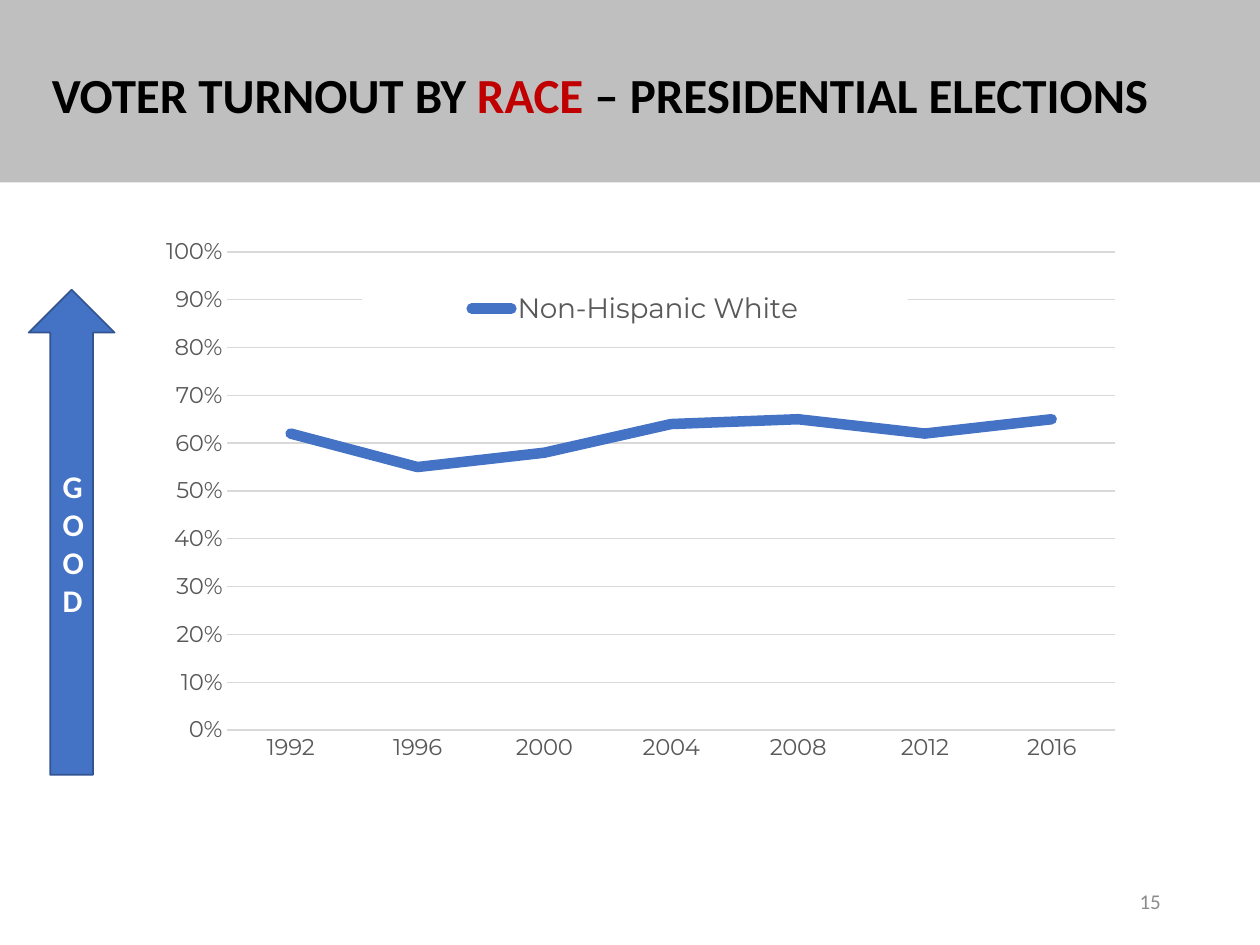
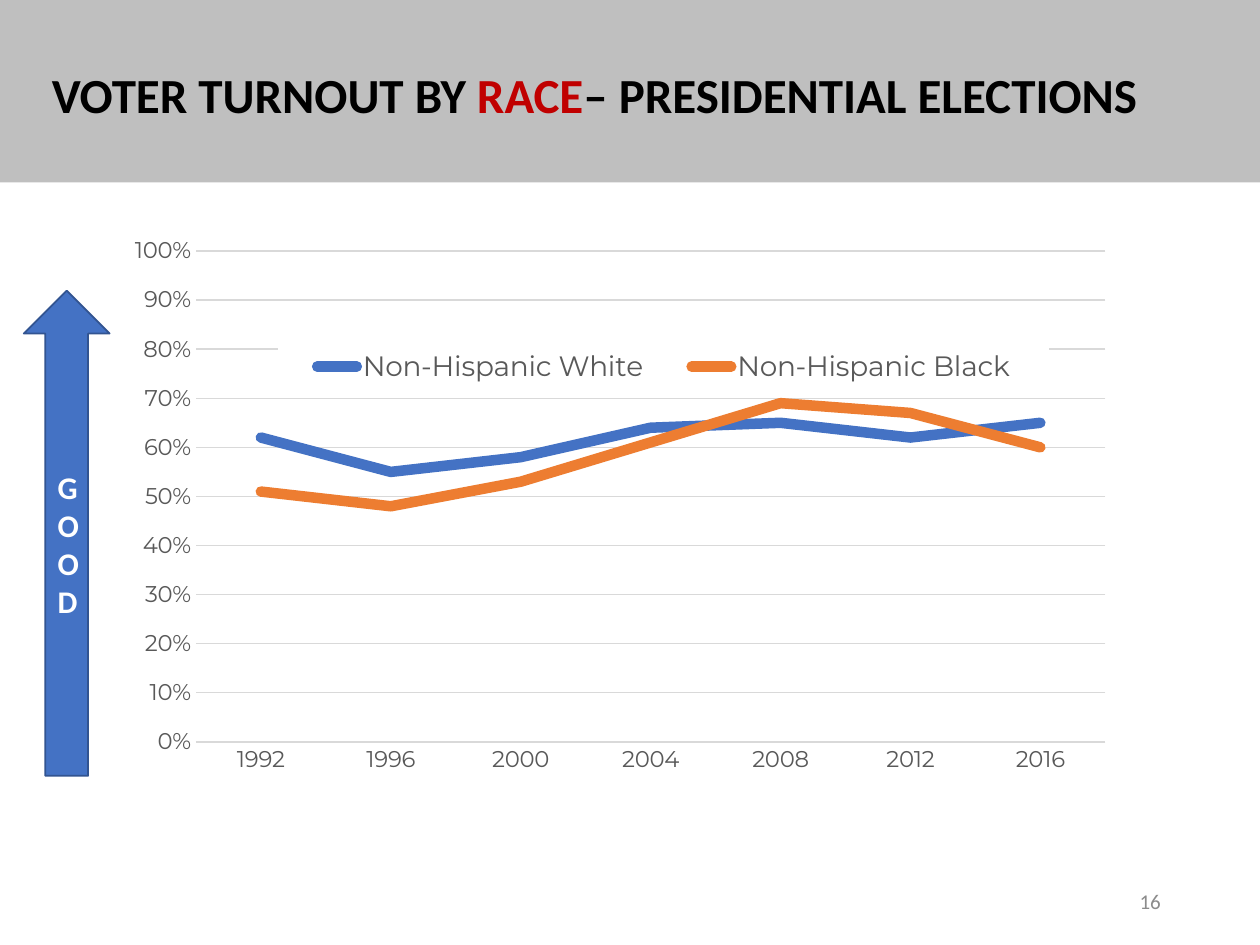
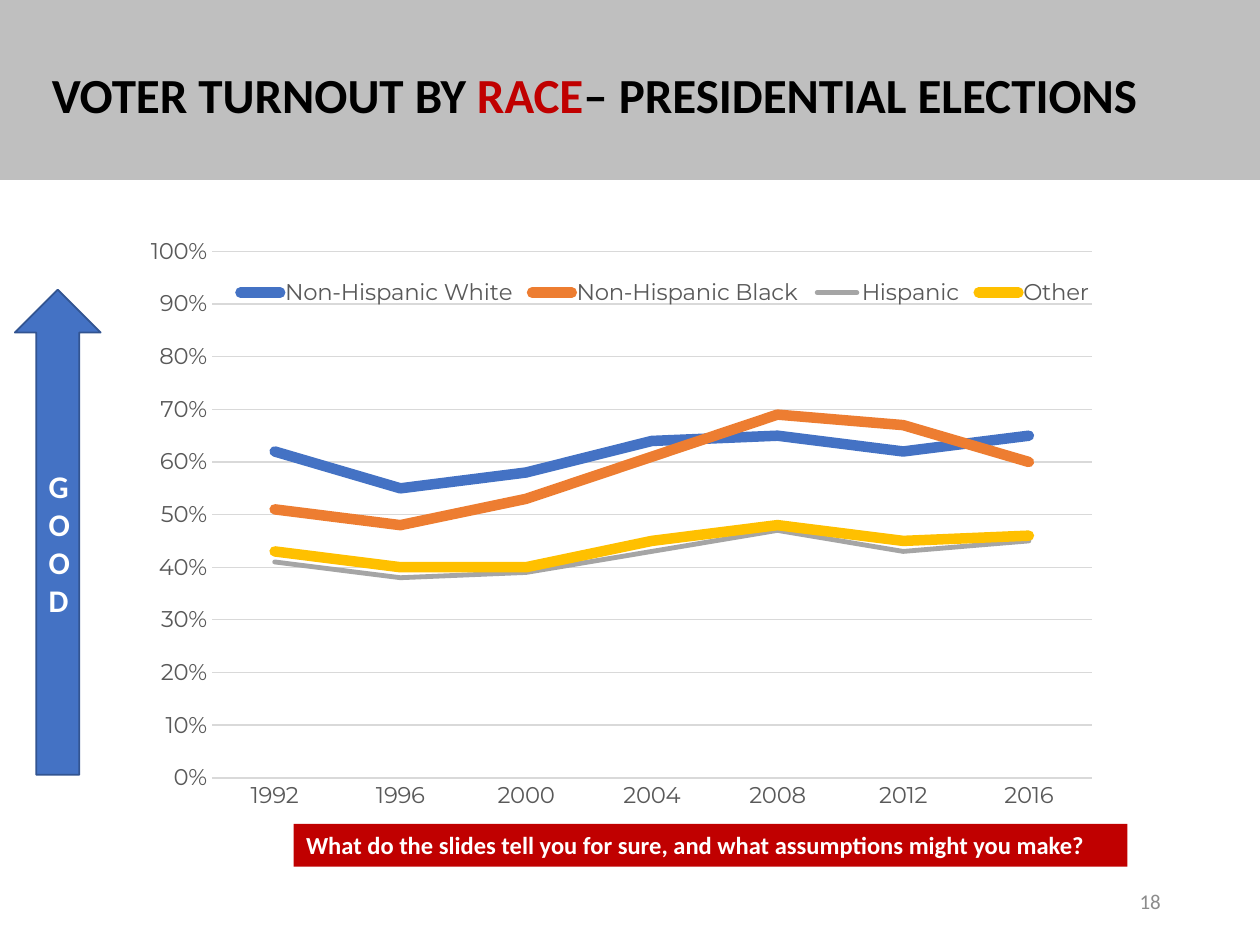
import pptx
import pptx.chart.data
import pptx.dml.color
import pptx.enum.chart
import pptx.enum.shapes
import pptx.enum.text
import pptx.oxml
import pptx.oxml.ns
import pptx.util
from pptx.util import Cm, Pt

# Shared colours and fonts
RGBColor = pptx.dml.color.RGBColor
BLACK = RGBColor(0x00, 0x00, 0x00)
WHITE = RGBColor(0xFF, 0xFF, 0xFF)
RED = RGBColor(0xC0, 0x00, 0x00)
BAND_GRAY = RGBColor(0xBF, 0xBF, 0xBF)
GRID_GRAY = RGBColor(0xD9, 0xD9, 0xD9)
LABEL_GRAY = RGBColor(0x59, 0x59, 0x59)
NUMBER_GRAY = RGBColor(0x8C, 0x8C, 0x8C)
BLUE = RGBColor(0x44, 0x72, 0xC4)
DARK_BLUE = RGBColor(0x32, 0x54, 0x91)
ORANGE = RGBColor(0xED, 0x7D, 0x31)
GRAY = RGBColor(0xA5, 0xA5, 0xA5)
GOLD = RGBColor(0xFF, 0xC0, 0x00)
TEXT_FONT = "Calibri"
CHART_FONT = "Montserrat"

# Turnout data: name, shares, line colour, line width
YEARS = ["1992", "1996", "2000", "2004", "2008", "2012", "2016"]
TURNOUT = [
    ("Non-Hispanic White", (0.62, 0.55, 0.58, 0.64, 0.65, 0.62, 0.65), BLUE, 6),
    ("Non-Hispanic Black", (0.51, 0.48, 0.53, 0.61, 0.69, 0.67, 0.60), ORANGE, 6),
    ("Hispanic", (0.41, 0.38, 0.39, 0.43, 0.47, 0.43, 0.45), GRAY, 2.75),
    ("Other", (0.43, 0.40, 0.40, 0.45, 0.48, 0.45, 0.46), GOLD, 6),
]

# What differs between slides; boxes are left, top, width, height in cm
SLIDES = [
    {"number": "15", "dash": " – ", "groups": 1, "band_top": 0,
     "arrow": (0.58, 5.84), "chart": (2.64, 4.55, 20.4, 12.4),
     "plot": (4.58, 5.08, 17.9, 9.64), "legend": (7.3, 5.62, 11, 1.2),
     "legend_size": 16, "legend_filled": True},
    {"number": "16", "dash": "– ", "groups": 2, "band_top": 0,
     "arrow": (0.48, 5.86), "chart": (2.64, 4.62, 19.66, 12.5),
     "plot": (3.95, 5.06, 18.34, 9.9), "legend": (5.61, 6.79, 15.54, 1.2),
     "legend_size": 16, "legend_filled": True},
    {"number": "18", "dash": "– ", "groups": 4, "band_top": -0.05,
     "arrow": (0.3, 5.84), "chart": (2.64, 4.55, 19.76, 12.95),
     "plot": (4.27, 5.07, 17.74, 10.61), "legend": (4.6, 5.3, 17.6, 1.2),
     "legend_size": 13, "legend_filled": False},
]


def add_run(paragraph, text, size, color, bold=True):
    run = paragraph.add_run()
    run.text = text
    run.font.name = TEXT_FONT
    run.font.size = Pt(size)
    run.font.bold = bold
    run.font.color.rgb = color


def set_chart_layout(parent, index, box, frame, target=""):
    """Place a chart part at a slide box, as fractions of the chart frame."""
    for old_layout in parent.findall(pptx.oxml.ns.qn("c:layout")):
        parent.remove(old_layout)
    left, top, width, height = box
    fractions = {"x": (left - frame[0]) / frame[2], "y": (top - frame[1]) / frame[3],
                 "w": width / frame[2], "h": height / frame[3]}
    modes = '<c:xMode val="edge"/><c:yMode val="edge"/>'
    values = "".join(f'<c:{key} val="{value:.4f}"/>' for key, value in fractions.items())
    parent.insert(index, pptx.oxml.parse_xml(
        f'<c:layout {pptx.oxml.ns.nsdecls("c")}><c:manualLayout>'
        f"{target}{modes}{values}</c:manualLayout></c:layout>"))


presentation = pptx.Presentation()
presentation.slide_width = Cm(25.4)
presentation.slide_height = Cm(19.05)
title_only_layout = presentation.slide_layouts[5]
shape_types = pptx.enum.shapes.MSO_SHAPE
anchors = pptx.enum.text.MSO_ANCHOR
alignments = pptx.enum.text.PP_ALIGN

for settings in SLIDES:
    slide = presentation.slides.add_slide(title_only_layout)

    # Band, moved behind the title
    band = slide.shapes.add_shape(shape_types.RECTANGLE, 0, Cm(settings["band_top"]),
                                  presentation.slide_width, Cm(3.68))
    band.shadow.inherit = False
    band.fill.solid()
    band.fill.fore_color.rgb = BAND_GRAY
    band.line.fill.background()
    slide.shapes.title._element.addprevious(band._element)

    # Title
    title = slide.shapes.title
    title.left, title.top, title.width, title.height = Cm(0.79), Cm(1.17), Cm(24.61), Cm(2.64)
    title.text_frame.vertical_anchor = anchors.TOP
    title.text_frame.auto_size = pptx.enum.text.MSO_AUTO_SIZE.NONE
    paragraph = title.text_frame.paragraphs[0]
    paragraph.alignment = alignments.LEFT
    add_run(paragraph, "VOTER TURNOUT BY ", 28, BLACK)
    add_run(paragraph, "RACE", 28, RED)
    add_run(paragraph, settings["dash"] + "PRESIDENTIAL ELECTIONS", 28, BLACK)

    # Line chart
    groups = TURNOUT[:settings["groups"]]
    chart_data = pptx.chart.data.CategoryChartData(number_format="0%")
    chart_data.categories = YEARS
    for name, shares, color, width in groups:
        chart_data.add_series(name, shares)
    chart = slide.shapes.add_chart(
        pptx.enum.chart.XL_CHART_TYPE.LINE,
        *[Cm(length) for length in settings["chart"]], chart_data).chart
    chart.has_title = False
    chart.font.name = TEXT_FONT
    chart.font.size = Pt(10)
    chart.plots[0].vary_by_categories = False
    for series, (name, shares, color, width) in zip(chart.plots[0].series, groups):
        series.smooth = False
        series.marker.style = pptx.enum.chart.XL_MARKER_STYLE.NONE
        series.format.line.color.rgb = color
        series.format.line.width = Pt(width)
        series._element.find(".//" + pptx.oxml.ns.qn("a:ln")).set("cap", "rnd")

    # Axes
    for axis in (chart.category_axis, chart.value_axis):
        axis.major_tick_mark = pptx.enum.chart.XL_TICK_MARK.NONE
        axis.minor_tick_mark = pptx.enum.chart.XL_TICK_MARK.NONE
        axis.tick_labels.font.name = CHART_FONT
        axis.tick_labels.font.size = Pt(13)
        axis.tick_labels.font.color.rgb = LABEL_GRAY
    chart.category_axis.format.line.color.rgb = GRID_GRAY
    chart.category_axis.format.line.width = Pt(1)
    value_axis = chart.value_axis
    value_axis.minimum_scale = 0
    value_axis.maximum_scale = 1
    value_axis.major_unit = 0.1
    value_axis.tick_labels.number_format = "0%"
    value_axis.tick_labels.number_format_is_linked = False
    value_axis.format.line.fill.background()
    value_axis.major_gridlines.format.line.color.rgb = GRID_GRAY
    value_axis.major_gridlines.format.line.width = Pt(0.75)

    # Legend and plot placement
    chart.has_legend = True
    legend = chart.legend
    legend.position = pptx.enum.chart.XL_LEGEND_POSITION.BOTTOM
    legend.include_in_layout = False
    legend.font.name = CHART_FONT
    legend.font.size = Pt(settings["legend_size"])
    legend.font.color.rgb = LABEL_GRAY
    set_chart_layout(legend._element, 1, settings["legend"], settings["chart"])
    if settings["legend_filled"]:
        legend._element.find(pptx.oxml.ns.qn("c:overlay")).addnext(pptx.oxml.parse_xml(
            f'<c:spPr {pptx.oxml.ns.nsdecls("c", "a")}><a:solidFill>'
            f'<a:srgbClr val="{WHITE}"/></a:solidFill></c:spPr>'))
    plot_area = chart._chartSpace.find(".//" + pptx.oxml.ns.qn("c:plotArea"))
    set_chart_layout(plot_area, 0, settings["plot"], settings["chart"],
                     '<c:layoutTarget val="inner"/>')

    # Arrow with stacked letters
    arrow_left, arrow_top = settings["arrow"]
    arrow = slide.shapes.add_shape(shape_types.UP_ARROW, Cm(arrow_left), Cm(arrow_top),
                                   Cm(1.73), Cm(9.78))
    arrow.shadow.inherit = False
    arrow.fill.solid()
    arrow.fill.fore_color.rgb = BLUE
    arrow.line.color.rgb = DARK_BLUE
    arrow.line.width = Pt(1)
    arrow.text_frame.vertical_anchor = anchors.MIDDLE
    arrow.text_frame._txBody.bodyPr.set("vert", "wordArtVert")
    paragraph = arrow.text_frame.paragraphs[0]
    paragraph.alignment = alignments.CENTER
    add_run(paragraph, "GOOD", 18, WHITE)

    # Slide number
    number_box = slide.shapes.add_textbox(Cm(17.93), Cm(17.65), Cm(5.72), Cm(1.02))
    number_box.text_frame.word_wrap = True
    number_box.text_frame.vertical_anchor = anchors.MIDDLE
    paragraph = number_box.text_frame.paragraphs[0]
    paragraph.alignment = alignments.RIGHT
    add_run(paragraph, settings["number"], 12, NUMBER_GRAY, bold=False)

# Closing question on the last slide
question = slide.shapes.add_shape(shape_types.RECTANGLE, Cm(5.92), Cm(16.61), Cm(16.81), Cm(0.86))
question.shadow.inherit = False
question.fill.solid()
question.fill.fore_color.rgb = RED
question.line.fill.background()
question.text_frame.word_wrap = True
question.text_frame.vertical_anchor = anchors.TOP
paragraph = question.text_frame.paragraphs[0]
paragraph.alignment = alignments.LEFT
add_run(paragraph, "What do the slides tell you for sure, and what assumptions might you make?",
        14, WHITE)

presentation.save("out.pptx")
